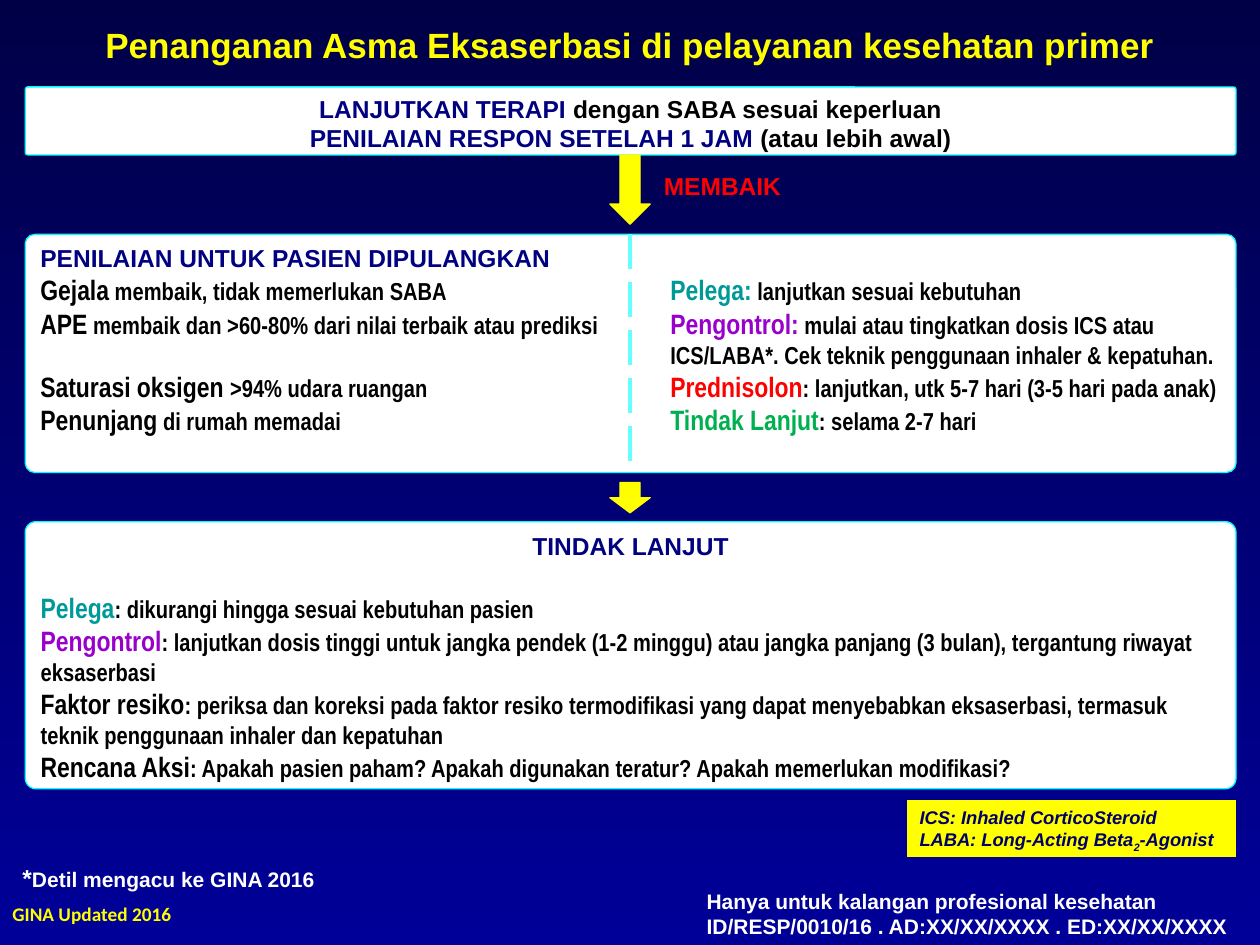
from dataclasses import dataclass

from lxml import etree
from pptx import Presentation
from pptx.dml.color import RGBColor
from pptx.enum.dml import MSO_LINE
from pptx.enum.shapes import MSO_CONNECTOR, MSO_SHAPE
from pptx.enum.text import MSO_ANCHOR, MSO_AUTO_SIZE, PP_ALIGN
from pptx.oxml.ns import qn
from pptx.util import Inches, Pt

ROUND, RECT, DOWN = MSO_SHAPE.ROUNDED_RECTANGLE, MSO_SHAPE.RECTANGLE, MSO_SHAPE.DOWN_ARROW
STRAIGHT, DASH = MSO_CONNECTOR.STRAIGHT, MSO_LINE.LONG_DASH
LEFT, CENTER, TOP = PP_ALIGN.LEFT, PP_ALIGN.CENTER, MSO_ANCHOR.TOP
FIT, FIXED = MSO_AUTO_SIZE.SHAPE_TO_FIT_TEXT, MSO_AUTO_SIZE.NONE

BLACK, WHITE, YELLOW, RED = "000000", "FFFFFF", "FFFF00", "FF0000"
NAVY, TEAL, PURPLE, GREEN = "000080", "009999", "9900CC", "00B050"
INK, CYAN, AQUA = "00006A", "00FFFF", "66FFFF"
SPLIT = 5.0


@dataclass
class Run:
    text: str
    size: float = 14
    color: str = BLACK
    font: str = "Arial"
    italic: bool = False
    sub: bool = False


@dataclass
class Para:
    runs: list[Run]
    align: int = LEFT
    after: float = 0
    tab: float = 0


@dataclass
class Card:
    top: float
    height: float
    paras: list[Para]


@dataclass
class Note:
    left: float
    top: float
    width: float
    height: float
    paras: list[Para]


def rgb(value: str) -> RGBColor:
    return RGBColor.from_string(value)


def write(frame, paras: list[Para], **form) -> None:
    for key, value in form.items():
        setattr(frame, key, value)
    for i, item in enumerate(paras):
        para = frame.add_paragraph() if i else frame.paragraphs[0]
        look = {"alignment": item.align, "space_before": Pt(0), "space_after": Pt(item.after)}
        for key, value in look.items():
            setattr(para, key, value)
        if item.tab:
            stops = etree.SubElement(para._p.get_or_add_pPr(), qn("a:tabLst"))
            etree.SubElement(stops, qn("a:tab"), pos=str(Inches(item.tab)), algn="l")
        for part in item.runs:
            run = para.add_run()
            run.text = part.text
            look = {"size": Pt(part.size), "name": part.font, "bold": True, "italic": part.italic}
            for key, value in look.items():
                setattr(run.font, key, value)
            run.font.color.rgb = rgb(part.color)
            if part.sub:
                run._r.get_or_add_rPr().set("baseline", "-25000")


def block(slide, kind, left: float, top: float, width: float, height: float,
          fill: str, edge: str = ""):
    shape = slide.shapes.add_shape(kind, Inches(left), Inches(top), Inches(width), Inches(height))
    shape.shadow.inherit = False
    shape.fill.solid()
    shape.fill.fore_color.rgb = rgb(fill)
    if edge:
        shape.line.color.rgb = rgb(edge)
        shape.line.width = Pt(0.75)
    else:
        shape.line.fill.background()
    return shape


def card(slide, item: Card) -> None:
    shape = block(slide, ROUND, 0.2, item.top, 9.61, item.height, WHITE, CYAN)
    shape.adjustments[0] = 0.04
    write(shape.text_frame, item.paras, word_wrap=True, vertical_anchor=TOP)


def note(slide, item: Note) -> None:
    box = slide.shapes.add_textbox(
        Inches(item.left), Inches(item.top), Inches(item.width), Inches(item.height))
    write(box.text_frame, item.paras, word_wrap=False, auto_size=FIT)


def arrow(slide, top: float, height: float) -> None:
    block(slide, DOWN, SPLIT - 0.16, top, 0.32, height, YELLOW, YELLOW)


def divide(slide, top: float, height: float) -> None:
    line = slide.shapes.add_connector(
        STRAIGHT, Inches(SPLIT), Inches(top), Inches(SPLIT), Inches(top + height))
    line.line.color.rgb = rgb(AQUA)
    line.line.width = Pt(2.5)
    line.line.dash_style = DASH
    etree.SubElement(line._element.spPr, qn("a:effectLst"))


def term(head: str, rest: str, color: str = BLACK) -> list[Run]:
    return [Run(head, 16, color, "Arial Narrow"), Run(rest, font="Arial Narrow")]


def pair(left: list[Run], right: list[Run]) -> Para:
    return Para(left + [Run("\t", font="Arial Narrow")] + right, tab=SPLIT)


def plain(text: str, size: float, color: str, font: str = "Arial") -> Para:
    return Para([Run(text, size, color, font)])


START = Card(0.69, 0.54, [
    Para([Run("LANJUTKAN TERAPI ", color=NAVY), Run("dengan SABA sesuai keperluan")], CENTER),
    Para([Run("PENILAIAN RESPON SETELAH 1 JAM ", color=NAVY), Run("(atau lebih awal)")], CENTER),
])
HOME = Card(1.86, 1.89, [
    plain("PENILAIAN UNTUK PASIEN DIPULANGKAN", 14, NAVY),
    pair(term("Gejala", " membaik, tidak memerlukan SABA"),
         term("Pelega:", " lanjutkan sesuai kebutuhan", TEAL)),
    pair(term("APE", " membaik dan >60-80% dari nilai terbaik atau prediksi"),
         term("Pengontrol:", " mulai atau tingkatkan dosis ICS atau", PURPLE)),
    pair([], [Run("ICS/LABA*. Cek teknik penggunaan inhaler & kepatuhan.", font="Arial Narrow")]),
    pair(term("Saturasi oksigen ", ">94% udara ruangan"),
         term("Prednisolon", ": lanjutkan, utk 5-7 hari (3-5 hari pada anak)", RED)),
    pair(term("Penunjang", " di rumah memadai"),
         term("Tindak Lanjut", ": selama 2-7 hari", GREEN)),
])
NEXT = Card(4.14, 2.12, [
    Para([Run("TINDAK LANJUT", color=NAVY)], CENTER, after=17),
    Para(term("Pelega", ": dikurangi hingga sesuai kebutuhan pasien", TEAL)),
    Para(term("Pengontrol", ": lanjutkan dosis tinggi untuk jangka pendek (1-2 minggu) atau "
              "jangka panjang (3 bulan), tergantung riwayat eksaserbasi", PURPLE)),
    Para(term("Faktor resiko", ": periksa dan koreksi pada faktor resiko termodifikasi yang dapat "
              "menyebabkan eksaserbasi, termasuk teknik penggunaan inhaler dan kepatuhan")),
    Para(term("Rencana Aksi", ": Apakah pasien paham? Apakah digunakan teratur? "
              "Apakah memerlukan modifikasi?")),
])
NOTES = [
    Note(0, 7.11, 1.46, 0.28, [plain("GINA Updated 2016", 11, YELLOW, "Calibri")]),
    Note(5.17, 1.31, 1.14, 0.34, [plain("MEMBAIK", 14, RED)]),
    Note(0.08, 6.8, 2.54, 0.34, [
        Para([Run("*", 14, WHITE), Run("Detil mengacu ke GINA 2016", 12, WHITE)])]),
    Note(5.51, 7, 4.49, 0.5, [
        plain("Hanya untuk kalangan profesional kesehatan", 12, WHITE),
        plain("ID/RESP/0010/16 . AD:XX/XX/XXXX . ED:XX/XX/XXXX", 12, WHITE)]),
]
TERMS = [
    Para([Run("ICS: Inhaled CorticoSteroid", 10.5, INK, italic=True)]),
    Para([Run("LABA: Long-Acting Beta", 10.5, INK, italic=True),
          Run("2", 10.5, INK, italic=True, sub=True),
          Run("-Agonist", 10.5, INK, italic=True)]),
]


def main() -> None:
    deck = Presentation()
    deck.slide_width, deck.slide_height = Inches(10), Inches(7.5)
    slide = deck.slides.add_slide(deck.slide_layouts[5])
    back = slide.background.fill
    back.gradient()
    back.gradient_angle = 270
    for stop, color in zip(back.gradient_stops, ("000047", "000099")):
        stop.color.rgb = rgb(color)

    title = slide.shapes.title
    place = {"left": 0.2, "top": 0.14, "width": 9.6, "height": 1.25}
    for key, value in place.items():
        setattr(title, key, Inches(value))
    head = Run("Penanganan Asma Eksaserbasi di pelayanan kesehatan primer", 20, YELLOW)
    write(title.text_frame, [Para([head], CENTER)],
          word_wrap=True, auto_size=FIXED, vertical_anchor=TOP)

    for item in (START, HOME, NEXT):
        card(slide, item)
    divide(slide, HOME.top, HOME.height)
    arrow(slide, 1.23, 0.55)
    arrow(slide, 3.83, 0.24)
    for item in NOTES:
        note(slide, item)
    label = block(slide, RECT, 7.2, 6.35, 2.61, 0.45, YELLOW)
    write(label.text_frame, TERMS, word_wrap=False, auto_size=FIT, vertical_anchor=TOP)
    deck.save("out.pptx")


if __name__ == "__main__":
    main()
